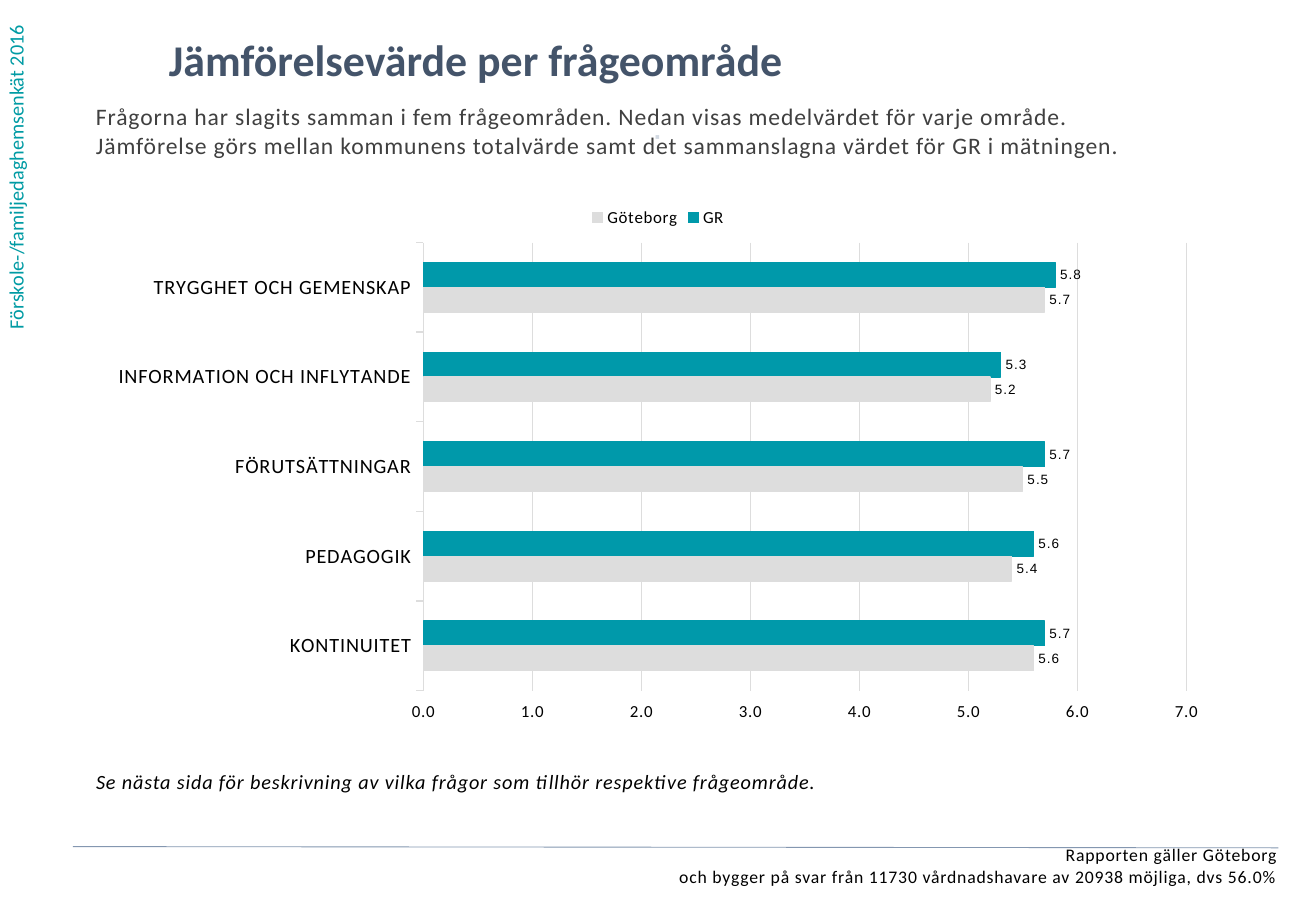
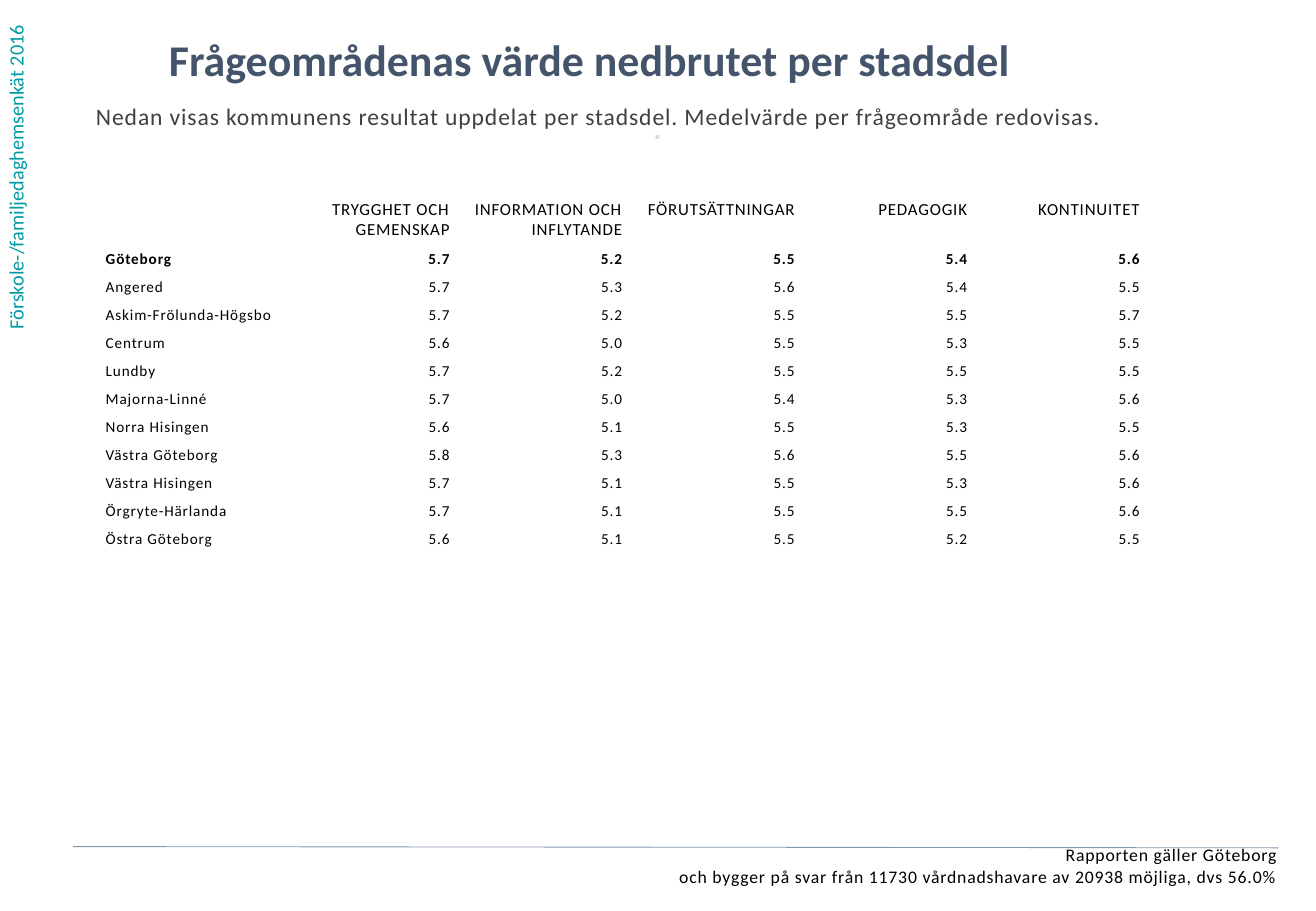
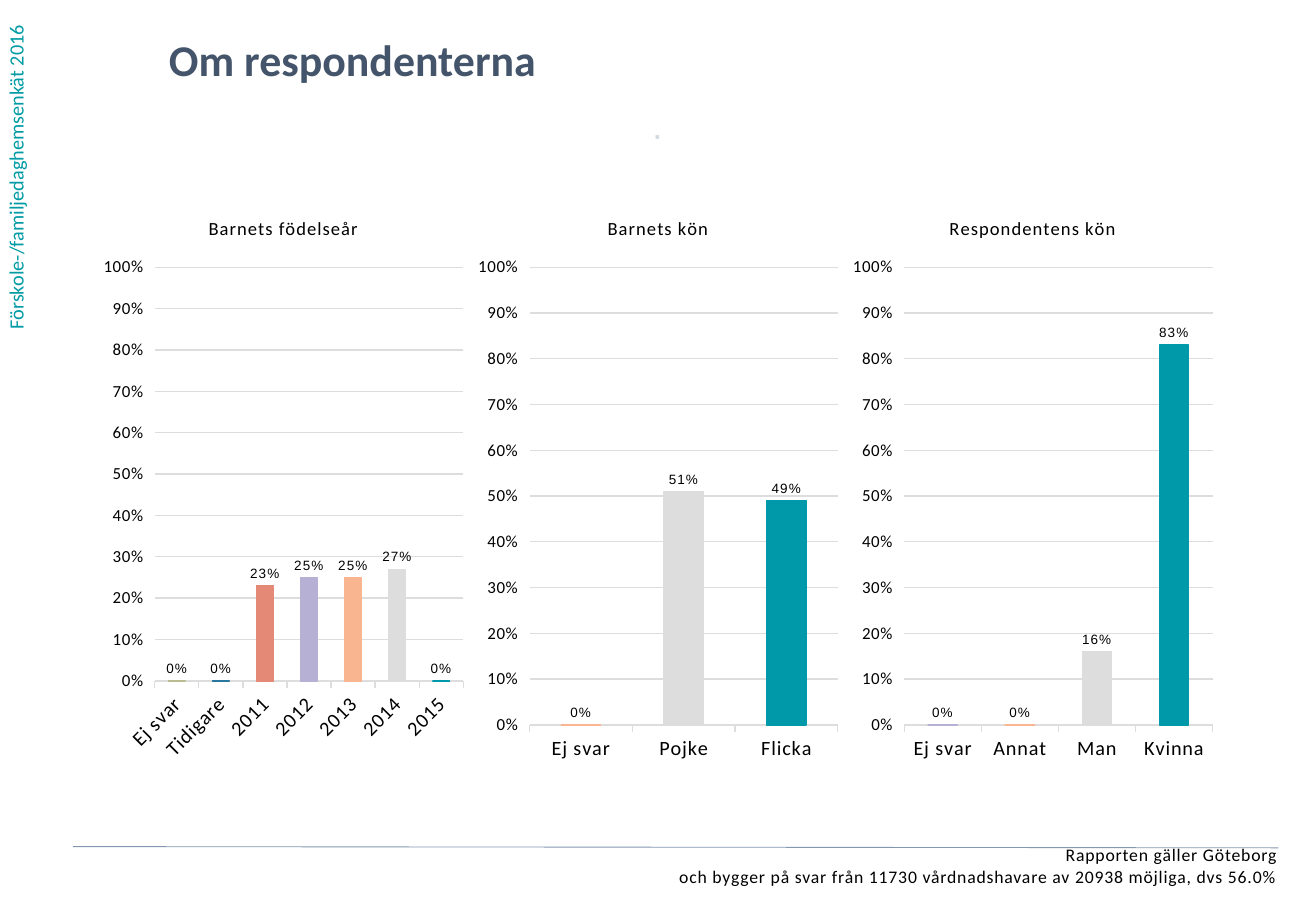
import pptx
import pptx.chart.data
import pptx.dml.color
import pptx.enum.chart
import pptx.enum.shapes
import pptx.enum.text
import pptx.oxml
import pptx.oxml.ns
import pptx.util

Inches = pptx.util.Inches
Pt = pptx.util.Pt
RGBColor = pptx.dml.color.RGBColor
ALIGN = pptx.enum.text.PP_ALIGN
ANCHOR = pptx.enum.text.MSO_ANCHOR
CHART_TYPE = pptx.enum.chart.XL_CHART_TYPE
qn = pptx.oxml.ns.qn

# Colours and font
BLACK = RGBColor(0x00, 0x00, 0x00)
WHITE = RGBColor(0xFF, 0xFF, 0xFF)
SLATE = RGBColor(0x44, 0x54, 0x6A)
CHARCOAL = RGBColor(0x40, 0x40, 0x40)
PALE_BLUE = RGBColor(0xD2, 0xD9, 0xE2)
RULE_BLUE = RGBColor(0x84, 0x97, 0xB0)
SIDE_TEAL = RGBColor(0x00, 0x9B, 0xA4)
TEAL = RGBColor(0x00, 0x99, 0xAA)
GREY = RGBColor(0xDD, 0xDD, 0xDD)
PEACH = RGBColor(0xF9, 0xB5, 0x90)
LILAC = RGBColor(0xB6, 0xB1, 0xD4)
CORAL = RGBColor(0xE5, 0x89, 0x77)
BLUE = RGBColor(0x29, 0x76, 0x9E)
OLIVE = RGBColor(0xBB, 0xBB, 0x90)
BAR_COLOURS = [TEAL, GREY, PEACH, LILAC, CORAL, BLUE, OLIVE]
FONT = "Calibri"
SPACING = "50"  # letter spacing in hundredths of a point

# Content grid
LEFT, TOP, WIDTH = 0.79, 1.6, 9.25


def write(frame, lines, size, colour, align=ALIGN.LEFT, bold=False, italic=False, spacing=SPACING):
    """Fill a text frame with equally formatted paragraphs."""
    frame.text = "\n".join(lines)
    frame.word_wrap = True
    for paragraph in frame.paragraphs:
        paragraph.alignment = align
        font = paragraph.font
        font.name, font.size, font.bold, font.italic = FONT, Pt(size), bold, italic
        font.color.rgb = colour
        paragraph._p.pPr.find(qn("a:defRPr")).set("spc", spacing)


def style_chart(chart, number_format, maximum, step):
    """Apply the axis, label and font style that all charts share."""
    chart.font.name, chart.font.size = FONT, Pt(10)
    chart.font.color.rgb = BLACK

    categories = chart.category_axis
    categories.reverse_order = True
    categories.tick_labels.font.size = Pt(12)
    categories.format.line.color.rgb = GREY
    categories.format.line.width = Pt(0.75)

    # The category order is reversed, so the high end is the bottom or left side
    values = chart.value_axis
    values.tick_label_position = pptx.enum.chart.XL_TICK_LABEL_POSITION.HIGH
    values.minimum_scale, values.maximum_scale, values.major_unit = 0, maximum, step
    values.tick_labels.number_format = number_format
    values.tick_labels.number_format_is_linked = False
    values.tick_labels.font.size = Pt(10)
    values.format.line.fill.background()
    values.major_gridlines.format.line.color.rgb = GREY
    values.major_gridlines.format.line.width = Pt(0.75)

    plot = chart.plots[0]
    plot.gap_width, plot.overlap = 162, 0
    plot.vary_by_categories = False
    for series, colour in zip(plot.series, BAR_COLOURS):
        series.format.fill.solid()
        series.format.fill.fore_color.rgb = colour
        series.format.line.color.rgb = colour
        series.format.line.width = Pt(0.75)
        labels = series.data_labels
        labels.show_value = True
        labels.number_format, labels.number_format_is_linked = number_format, False
        labels.position = pptx.enum.chart.XL_LABEL_POSITION.OUTSIDE_END
        labels.font.name, labels.font.size = "Arial", Pt(8)
    for properties in chart._chartSpace.iter(qn("a:defRPr")):
        properties.set("spc", SPACING)


prs = pptx.Presentation()
prs.slide_width, prs.slide_height = Inches(10.83), Inches(7.5)
title_only = prs.slide_layouts[5]

# Titles, introductions, footers and rules
pages = [
    ("Jämförelsevärde per frågeområde", [
        "Frågorna har slagits samman i fem frågeområden. Nedan visas medelvärdet för varje område.",
        "Jämförelse görs mellan kommunens totalvärde samt det sammanslagna värdet för GR i mätningen."]),
    ("Frågeområdenas värde nedbrutet per stadsdel", [
        "Nedan visas kommunens resultat uppdelat per stadsdel. Medelvärde per frågeområde redovisas."]),
    ("Om respondenterna", []),
]
footer_lines = ["Rapporten gäller Göteborg",
                "och bygger på svar från 11730 vårdnadshavare av 20938 möjliga, dvs 56.0%"]

for heading, intro in pages:
    slide = prs.slides.add_slide(title_only)
    title = slide.shapes.title
    title.left, title.top, title.width, title.height = Inches(1.39), Inches(0.27), Inches(8.34), Inches(0.57)
    title.text_frame.vertical_anchor = ANCHOR.TOP
    write(title.text_frame, [heading], 26, SLATE, bold=True, spacing="0")
    frames = [title.text_frame]

    text_boxes = [
        (footer_lines, (0.11, 6.95, 10.4, 0.43), 10.5, BLACK, ALIGN.RIGHT, False),
        (["⋅"], (3.87, 1.02, 3.08, 0.39), 12, PALE_BLUE, ALIGN.CENTER, True),
    ]
    if intro:
        text_boxes.insert(0, (intro, (LEFT, 0.84, 9.46, 1.01), 14, CHARCOAL, ALIGN.LEFT, False))
    for lines, box, size, colour, align, bold in text_boxes:
        frame = slide.shapes.add_textbox(*map(Inches, box)).text_frame
        write(frame, lines, size, colour, align, bold)
        frames.append(frame)
    for frame in frames:
        frame.margin_left = frame.margin_right = frame.margin_top = frame.margin_bottom = 0

    rule = slide.shapes.add_connector(pptx.enum.shapes.MSO_CONNECTOR.STRAIGHT,
                                      Inches(0.6), Inches(6.97), Inches(10.52), Inches(6.98))
    rule.line.color.rgb = RULE_BLUE
    rule.line.width = Pt(0.5)
    rule._element.spPr.append(pptx.oxml.parse_xml(f"<a:effectLst {pptx.oxml.ns.nsdecls('a')}/>"))

areas_slide, districts_slide, respondents_slide = prs.slides

# Vertical survey name, moved to the layout so that every slide shows it
survey_name = areas_slide.shapes.add_textbox(Inches(-0.02), 0, Inches(0.4), Inches(2.81))
write(survey_name.text_frame, ["Förskole-/familjedaghemsenkät 2016"], 12, SIDE_TEAL, spacing="0")
survey_name.text_frame._txBody.bodyPr.set("vert", "vert270")
title_only.shapes._spTree.append(survey_name._element)

# Slide 1: question areas compared
areas = ["TRYGGHET OCH GEMENSKAP", "INFORMATION OCH INFLYTANDE", "FÖRUTSÄTTNINGAR",
         "PEDAGOGIK", "KONTINUITET"]
area_data = pptx.chart.data.CategoryChartData()
area_data.categories = areas
area_data.add_series("GR", [5.8, 5.3, 5.7, 5.6, 5.7])
area_data.add_series("Göteborg", [5.7, 5.2, 5.5, 5.4, 5.6])
area_chart = areas_slide.shapes.add_chart(CHART_TYPE.BAR_CLUSTERED, Inches(LEFT), Inches(TOP),
                                          Inches(WIDTH), Inches(4.43), area_data).chart
area_chart.has_title = False
area_chart.has_legend = True
area_chart.legend.position = pptx.enum.chart.XL_LEGEND_POSITION.TOP
area_chart.legend.include_in_layout = False
area_chart.legend.font.size = Pt(10)
style_chart(area_chart, "0.0;0.0", 7, 1)

note = areas_slide.shapes.add_textbox(Inches(LEFT), Inches(6.33), Inches(WIDTH), Inches(0.3)).text_frame
note.margin_left = note.margin_right = note.margin_top = note.margin_bottom = 0
write(note, ["Se nästa sida för beskrivning av vilka frågor som tillhör respektive frågeområde."],
      12, BLACK, italic=True)

# Slide 2: values per district, with an empty last column
districts = [
    ("Göteborg", "5.7", "5.2", "5.5", "5.4", "5.6"),
    ("Angered", "5.7", "5.3", "5.6", "5.4", "5.5"),
    ("Askim-Frölunda-Högsbo", "5.7", "5.2", "5.5", "5.5", "5.7"),
    ("Centrum", "5.6", "5.0", "5.5", "5.3", "5.5"),
    ("Lundby", "5.7", "5.2", "5.5", "5.5", "5.5"),
    ("Majorna-Linné", "5.7", "5.0", "5.4", "5.3", "5.6"),
    ("Norra Hisingen", "5.6", "5.1", "5.5", "5.3", "5.5"),
    ("Västra Göteborg", "5.8", "5.3", "5.6", "5.5", "5.6"),
    ("Västra Hisingen", "5.7", "5.1", "5.5", "5.3", "5.6"),
    ("Örgryte-Härlanda", "5.7", "5.1", "5.5", "5.5", "5.6"),
    ("Östra Göteborg", "5.6", "5.1", "5.5", "5.2", "5.5"),
]
table_rows = [("", *areas), *districts]
column_widths = [1.57] + [1.42] * 5 + [1.37]
row_heights = [0.42] + [0.23] * len(districts)
district_table = districts_slide.shapes.add_table(
    len(table_rows), len(column_widths), Inches(LEFT), Inches(TOP),
    Inches(sum(column_widths)), Inches(sum(row_heights))).table
district_table.first_row = district_table.horz_banding = False
for column, width in zip(district_table.columns, column_widths):
    column.width = Inches(width)
for r, (values, height) in enumerate(zip(table_rows, row_heights)):
    district_table.rows[r].height = Inches(height)
    for c, value in enumerate((*values, "")):
        cell = district_table.cell(r, c)
        cell.fill.solid()
        cell.fill.fore_color.rgb = WHITE
        cell.margin_left = cell.margin_right = Inches(0.08)
        cell.margin_top = cell.margin_bottom = Inches(0.04)
        cell.vertical_anchor = ANCHOR.MIDDLE if r else ANCHOR.TOP
        write(cell.text_frame, [value], 9 if r else 10, BLACK,
              ALIGN.RIGHT if c else ALIGN.LEFT, bold=r == 1)

# Slide 3: three charts side by side
respondent_charts = [
    ("Barnets födelseår", ["2015", "2014", "2013", "2012", "2011", "Tidigare", "Ej svar"],
     [0, 0.27, 0.25, 0.25, 0.23, 0, 0]),
    ("Barnets kön", ["Flicka", "Pojke", "Ej svar"], [0.49, 0.51, 0]),
    ("Respondentens kön", ["Kvinna", "Man", "Annat", "Ej svar"], [0.83, 0.16, 0, 0]),
]
chart_width = WIDTH / len(respondent_charts)
for i, (heading, answers, shares) in enumerate(respondent_charts):
    share_data = pptx.chart.data.CategoryChartData()
    share_data.categories = answers
    share_data.add_series("Series 1", shares)
    chart = respondents_slide.shapes.add_chart(
        CHART_TYPE.COLUMN_CLUSTERED, Inches(LEFT + i * chart_width), Inches(TOP),
        Inches(chart_width), Inches(4.76), share_data).chart
    chart.has_legend = False
    chart.has_title = True
    chart.chart_title.include_in_layout = False
    write(chart.chart_title.text_frame, [heading], 11, BLACK, ALIGN.CENTER)
    style_chart(chart, "0%;0%", 1, 0.1)
    for p, colour in zip(range(len(answers)), BAR_COLOURS):
        point = chart.plots[0].series[0].points[p]
        point.format.fill.solid()
        point.format.fill.fore_color.rgb = colour
        point.format.line.color.rgb = colour
        point.format.line.width = Pt(0.75)

prs.save("out.pptx")
